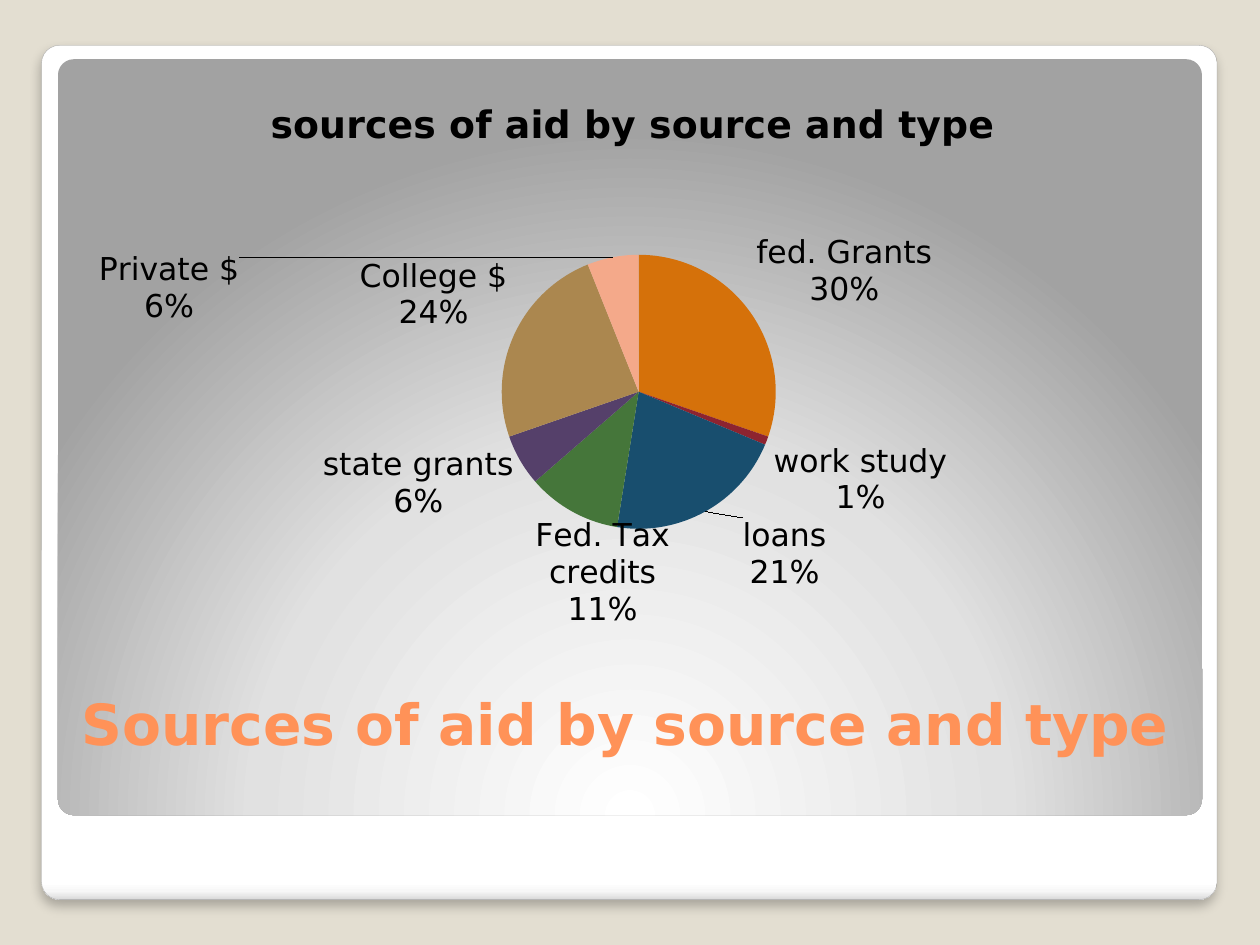
from lxml import etree
from pptx import Presentation
from pptx.chart.data import CategoryChartData
from pptx.dml.color import RGBColor
from pptx.enum.chart import XL_CHART_TYPE, XL_LABEL_POSITION
from pptx.enum.shapes import MSO_SHAPE
from pptx.enum.text import MSO_ANCHOR, PP_ALIGN
from pptx.oxml import parse_xml
from pptx.oxml.ns import nsdecls, qn
from pptx.util import Inches, Pt

PIE = XL_CHART_TYPE.PIE
OUT = XL_LABEL_POSITION.OUTSIDE_END
ROUND = MSO_SHAPE.ROUNDED_RECTANGLE
TOP = MSO_ANCHOR.TOP
LEFT = PP_ALIGN.LEFT
FONT = "DejaVu Sans"

# Category, value, slice colour
AID = [
    ("fed. Grants", 30, "D5710A"),
    ("work study", 1, "8D2430"),
    ("loans", 21, "184E6E"),
    ("Fed. Tax credits", 11, "45763A"),
    ("state grants", 6, "55406A"),
    ("College $", 24, "AB874F"),
    ("Private $", 6, "F4A98A"),
]
# Labels moved from their usual place: index, x and y shift
MOVED = [(2, 0.03, 0), (3, 0.09, 0), (4, 0, -0.03), (6, -0.33, 0.13)]


def color(code):
    return RGBColor.from_string(code)


def style(font, size, code, bold=False):
    font.name, font.size, font.bold = FONT, Pt(size), bold
    font.color.rgb = color(code)


def panel(slide, box, stops, path):
    """Rounded panel with a gradient of (percent, colour) stops."""
    shape = slide.shapes.add_shape(ROUND, *[Inches(n) for n in box])
    shape.adjustments[0] = 0.021
    shape.shadow.inherit = False
    shape.line.fill.background()
    shape.fill.gradient()
    marks = "".join(
        f'<a:gs pos="{pos * 1000}"><a:srgbClr val="{code}"/></a:gs>'
        for pos, code in stops)
    props = shape.element.spPr
    old = props.find(qn("a:gradFill"))
    props.replace(old, parse_xml(
        f'<a:gradFill {nsdecls("a")} rotWithShape="1">'
        f"<a:gsLst>{marks}</a:gsLst>{path}</a:gradFill>"))
    return shape


def shade(shape):
    """Soft shadow straight below the shape."""
    effect = shape.element.spPr.find(qn("a:effectLst"))
    effect.append(parse_xml(
        f'<a:outerShdw {nsdecls("a")} blurRad="{Pt(6)}" dist="{Pt(4)}" '
        'dir="5400000" algn="t" rotWithShape="0"><a:srgbClr val="000000">'
        '<a:alpha val="25000"/></a:srgbClr></a:outerShdw>'))


def layout(inner="", **place):
    """Manual chart layout, in fractions of the chart."""
    tags = "".join(f'<c:{k} val="{v}"/>' for k, v in place.items())
    return parse_xml(f'<c:layout {nsdecls("c")}><c:manualLayout>{inner}{tags}'
                     "</c:manualLayout></c:layout>")


def split(label):
    """Put name and percentage on separate lines."""
    part = etree.Element(qn("c:separator"))
    part.text = "\n"
    label.find(qn("c:showBubbleSize")).addnext(part)


def shift(point, x, y):
    """Move one label off its usual place."""
    point.data_label.position = OUT
    label = point.data_label._dLbl
    label.find(qn("c:idx")).addnext(layout(x=x, y=y))
    for tag, val in (("Val", 0), ("CatName", 1), ("Percent", 1)):
        label.find(qn(f"c:show{tag}")).set("val", str(val))
    split(label)


def pie(slide, box, name):
    data = CategoryChartData()
    data.categories = [row[0] for row in AID]
    data.add_series(name, [row[1] for row in AID])
    frame = slide.shapes.add_chart(PIE, *[Inches(n) for n in box], data)
    chart = frame.chart
    style(chart.font, 18, "000000")
    chart.has_legend = False
    chart.has_title = True
    head = chart.chart_title.text_frame
    head.text = name
    style(head.paragraphs[0].runs[0].font, 21.6, "000000", True)

    # Place of the pie within the chart
    area = chart._chartSpace.find(".//" + qn("c:plotArea"))
    for old in area.findall(qn("c:layout")):
        area.remove(old)
    area.insert(0, layout(
        '<c:layoutTarget val="inner"/><c:xMode val="edge"/>'
        '<c:yMode val="edge"/>', x=0.38, y=0.315, w=0.25, h=0.475))

    # Slices and labels
    plot = chart.plots[0]
    plot.vary_by_categories = True
    series = plot.series[0]
    labels = series.data_labels
    labels.show_value = False
    labels.show_category_name = labels.show_percentage = True
    labels.number_format, labels.number_format_is_linked = "0%", False
    labels.position = OUT
    split(labels._element)
    for i, row in enumerate(AID):
        fill = series.points[i].format.fill
        fill.solid()
        fill.fore_color.rgb = color(row[2])
    for i, x, y in MOVED:
        shift(series.points[i], x, y)


def title(slide, box, text):
    shape = slide.shapes.title
    shape.left, shape.top, shape.width, shape.height = map(Inches, box)
    frame = shape.text_frame
    frame.text = text
    frame.word_wrap = True
    frame.vertical_anchor = TOP
    para = frame.paragraphs[0]
    para.alignment = LEFT
    style(para.runs[0].font, 32.4, "FF9258", True)
    # Bring in front of the panels
    slide.shapes._spTree.append(shape.element)


def main():
    prs = Presentation()
    prs.slide_width, prs.slide_height = Inches(10), Inches(7.5)
    slide = prs.slides.add_slide(prs.slide_layouts[5])
    back = slide.background.fill
    back.solid()
    back.fore_color.rgb = color("E3DED1")

    # Frame and inner panel
    card = panel(slide, (0.33, 0.36, 9.33, 6.78),
                 [(0, "FFFFFF"), (98, "FFFFFF"), (99, "F7F7F7"),
                  (100, "DADADA")], '<a:lin ang="5400000" scaled="0"/>')
    card.line.color.rgb = color("A4A4A4")
    card.line.width = Pt(0.16)
    shade(card)
    panel(slide, (0.46, 0.47, 9.08, 6),
          [(0, "FFFFFF"), (55, "E1E1E1"), (100, "A2A2A2")],
          '<a:path path="circle"><a:fillToRect l="50000" t="175000" '
          'r="50000" b="-75000"/></a:path>')

    # Title and chart
    title(slide, (0.55, 5.42, 8.95, 1.15), "Sources of aid by source and type")
    pie(slide, (0.55, 0.58, 8.95, 4.58), "sources of aid by source and type")
    prs.save("out.pptx")


if __name__ == "__main__":
    main()
